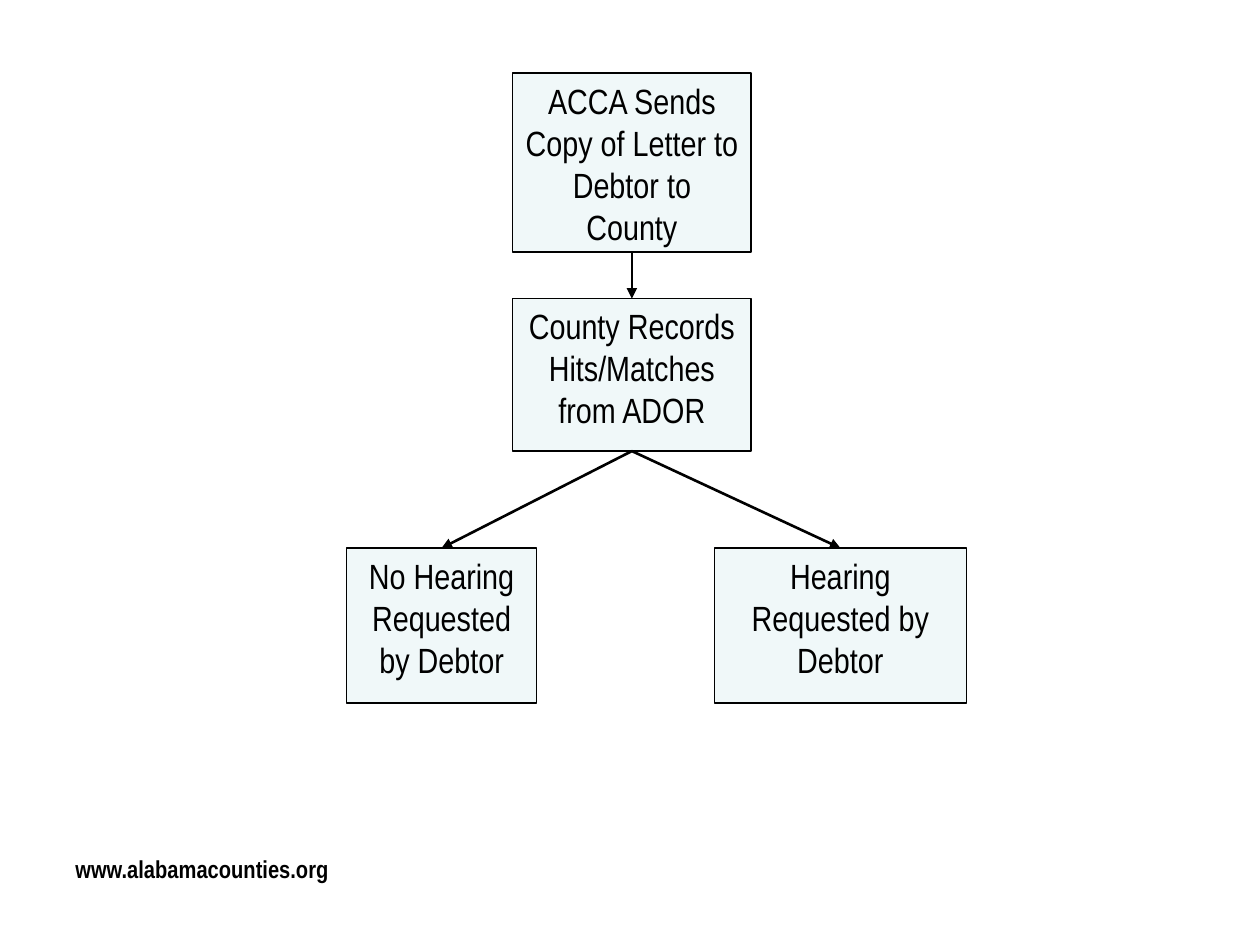
from lxml import etree
from pptx import Presentation
from pptx.dml.color import RGBColor
from pptx.enum.shapes import MSO_CONNECTOR, MSO_SHAPE
from pptx.enum.text import MSO_ANCHOR, PP_ALIGN
from pptx.oxml.ns import qn
from pptx.util import Inches, Pt

RECTANGLE = MSO_SHAPE.RECTANGLE
STRAIGHT = MSO_CONNECTOR.STRAIGHT
TOP = MSO_ANCHOR.TOP
CENTER, LEFT = PP_ALIGN.CENTER, PP_ALIGN.LEFT
TOP_SITE, BOTTOM_SITE = 0, 2

COLORS = {"ink": "000000", "step": "F0F8F9", "page": "FFFFFF"}
STEP_FONT = {"name": "Arial Narrow", "size": Pt(20), "bold": False}
FOOTER_FONT = {"name": "Arial Narrow", "size": Pt(14), "bold": True}

STEPS = {
    "letter": ("ACCA Sends Copy of Letter to Debtor to County", (1.32, 0, 1.89, 1.42)),
    "records": ("County Records Hits/Matches from ADOR", (1.32, 1.79, 1.89, 1.21)),
    "no_hearing": ("No Hearing Requested by Debtor", (0, 3.77, 1.51, 1.23)),
    "hearing": ("Hearing Requested by Debtor", (2.92, 3.77, 2, 1.23)),
}
LINKS = [("letter", "records"), ("records", "no_hearing"), ("records", "hearing")]


def color(name):
    """Return the named colour."""
    return RGBColor.from_string(COLORS[name])


def write_text(shape, text, font_values, alignment):
    """Write one wrapped, top-anchored paragraph into a shape."""
    frame = shape.text_frame
    frame.word_wrap = True
    frame.vertical_anchor = TOP
    para = frame.paragraphs[0]
    para.alignment = alignment
    span = para.add_run()
    span.text = text
    for attribute, value in font_values.items():
        setattr(span.font, attribute, value)
    span.font.color.rgb = color("ink")


def add_step(page, text, left, top, width, height):
    """Add one outlined box of the flowchart."""
    box = page.shapes.add_shape(
        RECTANGLE, Inches(left), Inches(top), Inches(width), Inches(height))
    box.shadow.inherit = False
    box.fill.solid()
    box.fill.fore_color.rgb = color("step")
    box.line.color.rgb = color("ink")
    box.line.width = Pt(0.75)
    write_text(box, text, STEP_FONT, CENTER)
    return box


def add_arrow(page, source, target):
    """Connect the bottom of one box to the top of another with an arrow."""
    arrow = page.shapes.add_connector(STRAIGHT, 0, 0, 0, 0)
    arrow.begin_connect(source, BOTTOM_SITE)
    arrow.end_connect(target, TOP_SITE)
    arrow.line.color.rgb = color("ink")
    arrow.line.width = Pt(1.5)
    etree.SubElement(arrow.line._get_or_add_ln(), qn("a:tailEnd"), type="triangle")
    etree.SubElement(arrow._element.spPr, qn("a:effectLst"))


def add_flowchart(page, left, top):
    """Place the steps and their arrows from the given corner."""
    boxes = {
        name: add_step(page, text, left + x, top + y, width, height)
        for name, (text, (x, y, width, height)) in STEPS.items()
    }
    for source, target in LINKS:
        add_arrow(page, boxes[source], boxes[target])


def add_footer(page, left, top, width, height):
    """Place the web address in the given box."""
    box = page.shapes.add_textbox(
        Inches(left), Inches(top), Inches(width), Inches(height))
    write_text(box, "www.alabamacounties.org", FOOTER_FONT, LEFT)


def main():
    """Build and save the slide."""
    deck = Presentation()
    deck.slide_width, deck.slide_height = Inches(10), Inches(7.5)
    page = deck.slides.add_slide(deck.slide_layouts[6])
    page.background.fill.solid()
    page.background.fill.fore_color.rgb = color("page")
    add_footer(page, 0.5, 6.73, 3.17, 0.52)
    add_flowchart(page, 2.75, 0.58)
    deck.save("out.pptx")


if __name__ == "__main__":
    main()
